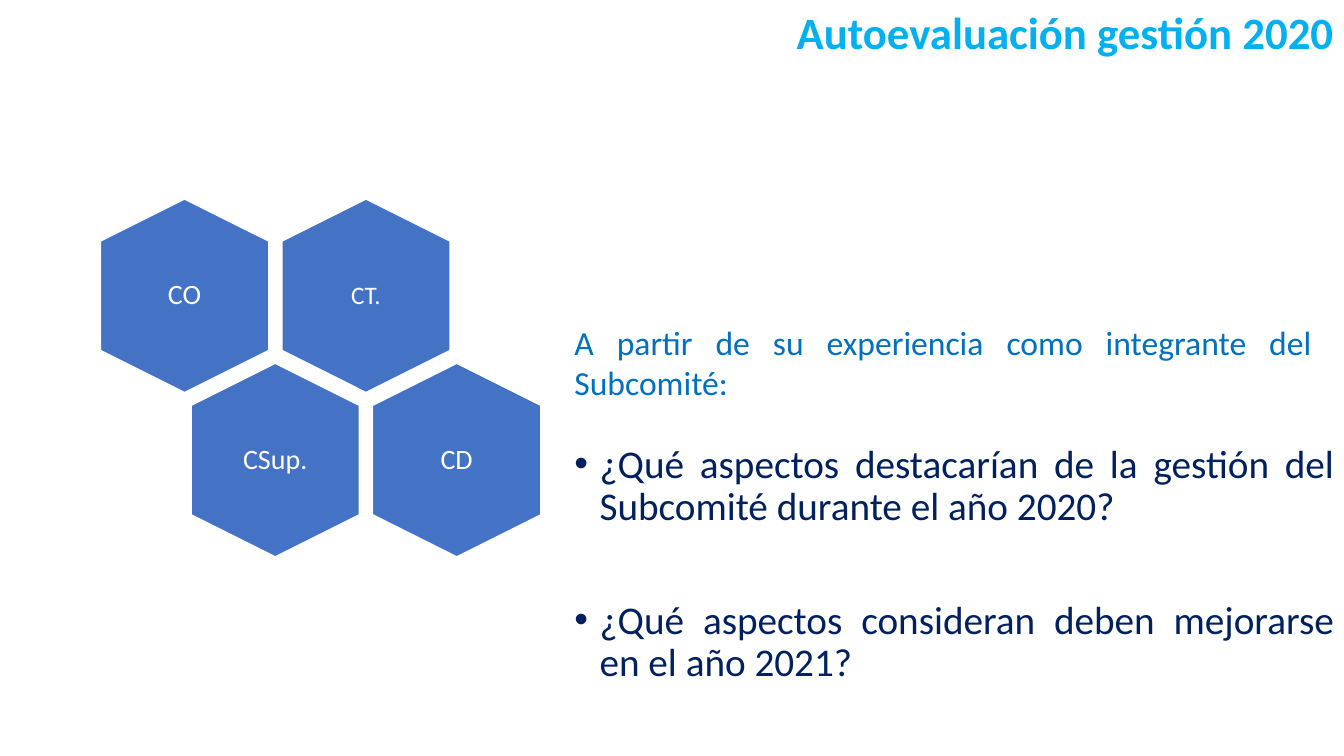
from dataclasses import dataclass

from lxml.etree import SubElement
from pptx import Presentation
from pptx.dml.color import RGBColor
from pptx.enum.shapes import MSO_SHAPE
from pptx.enum.text import MSO_ANCHOR, MSO_AUTO_SIZE, PP_ALIGN
from pptx.oxml.ns import qn
from pptx.util import Inches, Pt


@dataclass(frozen=True)
class Theme:
    """Colours, font and type sizes of the slide."""

    font: str = "Calibri"
    white: str = "FFFFFF"
    heading: str = "00B0F0"
    intro: str = "0070C0"
    question: str = "002060"
    hexagon: str = "4472C4"
    heading_size: int = 32
    question_size: int = 28
    intro_size: int = 24
    label_size: int = 20
    small_label_size: int = 18


class SlideBuilder:
    """Draws themed elements placed by percentages of the slide's size."""

    def __init__(self, deck, theme):
        """Add a title-only page to the deck."""
        self.deck, self.theme = deck, theme
        self.page = deck.slides.add_slide(deck.slide_layouts[5])
        self.page.background.fill.solid()
        self.page.background.fill.fore_color.rgb = RGBColor.from_string(theme.white)

    def area(self, left, top, width, height):
        """Turn percentages of the slide into lengths."""
        across, down = self.deck.slide_width / 100, self.deck.slide_height / 100
        return int(left * across), int(top * down), int(width * across), int(height * down)

    def set_text(self, box, texts, size, color, align, bold=False):
        """Fill a box with paragraphs of one style and return them."""
        frame = box.text_frame
        frame.word_wrap = True
        frame.auto_size = MSO_AUTO_SIZE.NONE
        frame.vertical_anchor = MSO_ANCHOR.TOP
        frame.text = "\n".join(texts)
        for para in frame.paragraphs:
            para.alignment = align
            para.font.name = self.theme.font
            para.font.size = Pt(size)
            para.font.bold = bold
            para.font.color.rgb = RGBColor.from_string(color)
        return frame.paragraphs

    def title(self, text, *place):
        """Move the title placeholder and fill in the heading."""
        box = self.page.shapes.title
        box.left, box.top, box.width, box.height = self.area(*place)
        self.set_text(box, [text], self.theme.heading_size, self.theme.heading,
                      PP_ALIGN.RIGHT, bold=True)

    def intro(self, text, *place):
        """Add the justified lead-in."""
        box = self.page.shapes.add_textbox(*self.area(*place))
        self.set_text(box, [text], self.theme.intro_size, self.theme.intro, PP_ALIGN.JUSTIFY)

    def questions(self, texts, *place):
        """Add justified bulleted questions."""
        box = self.page.shapes.add_textbox(*self.area(*place))
        for para in self.set_text(box, texts, self.theme.question_size,
                                  self.theme.question, PP_ALIGN.JUSTIFY):
            para.line_spacing = 0.9
            para.space_before = Pt(10)
            para.space_after = Pt(41)
            properties = para._p.get_or_add_pPr()
            properties.set("marL", str(Inches(0.25)))
            properties.set("indent", str(-Inches(0.25)))
            SubElement(properties, qn("a:buFont")).set("typeface", "Arial")
            SubElement(properties, qn("a:buChar")).set("char", "•")

    def centred(self, column, row, width, height):
        """Give the area of an element centred on a honeycomb cell."""
        middle, centre = 13.73 + 6.75 * column, 39.13 + 21.73 * row
        return self.area(middle - width / 2, centre - height / 2, width, height)

    def hexagon(self, text, column, row, size):
        """Draw an upright hexagon with its label."""
        shape = self.page.shapes.add_shape(
            MSO_SHAPE.HEXAGON, *self.centred(column, row, 14.4, 22.27))
        shape.rotation = 90
        shape.adjustments[0] = 0.25
        shape.shadow.inherit = False
        shape.fill.solid()
        shape.fill.fore_color.rgb = RGBColor.from_string(self.theme.hexagon)
        shape.line.color.rgb = RGBColor.from_string(self.theme.white)
        shape.line.width = Pt(1)
        label = self.page.shapes.add_textbox(*self.centred(column, row, 8.63, 17.6))
        para = self.set_text(label, [text], size, self.theme.white, PP_ALIGN.CENTER)[0]
        para.line_spacing = 0.9
        label.text_frame.vertical_anchor = MSO_ANCHOR.MIDDLE


def main():
    """Build and save the self-assessment slide."""
    deck = Presentation()
    deck.slide_width, deck.slide_height = Inches(13.33), Inches(7.5)
    theme = Theme()
    builder = SlideBuilder(deck, theme)
    builder.title("Autoevaluación gestión 2020", 10.1, 0, 89.9, 8.53)
    builder.intro("A partir de su experiencia como integrante del Subcomité:",
                  42, 41.87, 56.34, 12.13)
    builder.questions(
        ["¿Qué aspectos destacarían de la gestión del Subcomité durante el año 2020?",
         "¿Qué aspectos consideran deben mejorarse en el año 2021?"],
        42, 58.13, 58, 34.13)
    for text, column, row, size in (
        ("CO", 0, 0, theme.label_size),
        ("CT.", 2, 0, theme.small_label_size),
        ("CSup.", 1, 1, theme.label_size),
        ("CD", 3, 1, theme.label_size),
    ):
        builder.hexagon(text, column, row, size)
    deck.save("out.pptx")


if __name__ == "__main__":
    main()
